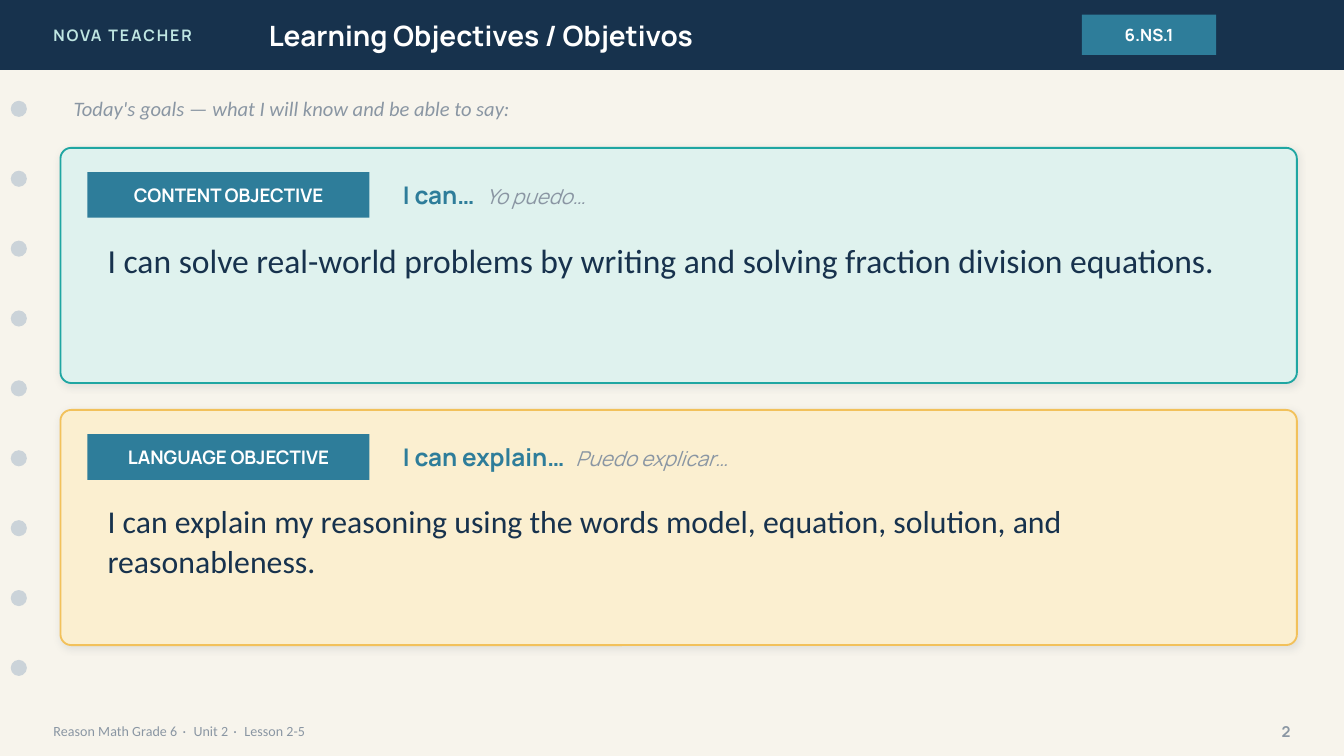
from lxml.etree import SubElement
from pptx import Presentation
from pptx.dml.color import RGBColor
from pptx.enum.shapes import MSO_SHAPE as Shape
from pptx.enum.text import MSO_ANCHOR as Anchor, MSO_AUTO_SIZE as AutoSize, PP_ALIGN as Align
from pptx.oxml.ns import qn
from pptx.util import Pt

NAVY, BLUE, GRAY, WHITE = "17324D", "2E7D9A", "8A96A3", "FFFFFF"
HEADING, BODY = "Manrope", "Calibri"


def color(hex_string):
    return RGBColor.from_string(hex_string)


def style(font, name, size, hex_string, bold=False, italic=False):
    font.name, font.size = name, Pt(size)
    font.bold, font.italic = bold, italic
    font.color.rgb = color(hex_string)


def add_run(paragraph, text, spacing=0):
    """Add a run; spacing is the extra room after each letter, in points."""
    run = paragraph.add_run()
    run.text = text
    if spacing:
        run.font._element.set("spc", str(round(spacing * 100)))
    return run


def place(shape, left, top, width, height):
    shape.left, shape.top = Pt(left), Pt(top)
    shape.width, shape.height = Pt(width), Pt(height)


def add_shape(slide, kind, box, fill, line=None):
    shape = slide.shapes.add_shape(kind, *map(Pt, box))
    shape.shadow.inherit = False
    shape.fill.solid()
    shape.fill.fore_color.rgb = color(fill)
    if line:
        shape.line.color.rgb = color(line)
        shape.line.width = Pt(1)
    else:
        shape.line.fill.background()
    return shape


def add_soft_shadow(shape):
    effects = shape._element.spPr.find(qn("a:effectLst"))
    shadow = SubElement(effects, qn("a:outerShdw"), blurRad=str(Pt(4)),
                        dist=str(Pt(1)), dir="5400000", algn="bl", rotWithShape="0")
    tint = SubElement(shadow, qn("a:srgbClr"), val="1C2E42")
    SubElement(tint, qn("a:alpha"), val="10000")


def add_text(slide, box):
    """Add a vertically centred text box and return its paragraph."""
    frame = slide.shapes.add_textbox(*map(Pt, box)).text_frame
    frame.word_wrap = True
    frame.vertical_anchor = Anchor.MIDDLE
    return frame.paragraphs[0]


def add_tag(slide, box, text, size):
    frame = add_shape(slide, Shape.RECTANGLE, box, BLUE).text_frame
    frame.vertical_anchor = Anchor.MIDDLE
    paragraph = frame.paragraphs[0]
    paragraph.text = text
    paragraph.alignment = Align.CENTER
    style(paragraph.font, HEADING, size, WHITE, bold=True)


def fill_placeholder(slide, shape, box, text, anchor):
    """Place a placeholder in front of what is drawn so far, without a bullet."""
    slide.shapes._spTree.append(shape._element)
    place(shape, *box)
    frame = shape.text_frame
    frame.auto_size = AutoSize.NONE
    frame.word_wrap = True
    frame.vertical_anchor = anchor
    paragraph = frame.paragraphs[0]
    paragraph.text = text
    paragraph.alignment = Align.LEFT
    paragraph.space_before = Pt(0)
    properties = paragraph._p.get_or_add_pPr()
    properties.set("marL", "0")
    properties.set("indent", "0")
    SubElement(properties, qn("a:buNone"))
    return paragraph


def add_header(slide):
    add_shape(slide, Shape.RECTANGLE, (0, 0, 720, 37.5), NAVY)
    paragraph = add_text(slide, (21.6, 0, 172.8, 37.5))
    add_run(paragraph, "NOVA TEACHER", spacing=1)
    style(paragraph.font, HEADING, 8.5, "BFE6E2", bold=True)
    title = fill_placeholder(slide, slide.shapes.title, (136.8, 0, 403.2, 37.5),
                             "Learning Objectives / Objetivos", Anchor.MIDDLE)
    style(title.font, HEADING, 15, WHITE, bold=True)
    add_tag(slide, (579.6, 7.9, 72, 21.6), "6.NS.1", 9)


def add_binder_holes(slide):
    for row in range(9):
        add_shape(slide, Shape.OVAL, (5.76, 54 + row * 37.44, 8.64, 8.64), "CBD3D9")


def add_footer(slide):
    paragraph = add_text(slide, (21.6, 381.6, 504, 20.2))
    for index, part in enumerate(("Reason Math Grade 6", "Unit 2", "Lesson 2-5")):
        if index:
            add_run(paragraph, " · ", spacing=1.1)
        add_run(paragraph, part)
    style(paragraph.font, BODY, 7.5, GRAY)
    number = add_text(slide, (662.4, 381.6, 36, 20.2))
    number.text = "2"
    number.alignment = Align.RIGHT
    style(number.font, HEADING, 8, GRAY, bold=True)


def add_objective(slide, body, top, fill, line, tag, starter, translation, goal, size):
    card = add_shape(slide, Shape.ROUNDED_RECTANGLE, (32.4, top, 662.4, 126), fill, line)
    card.adjustments[0] = 0.046
    add_soft_shadow(card)
    add_tag(slide, (46.8, top + 13, 151.2, 24.5), tag, 10)
    # Sentence starter in English, then in Spanish
    paragraph = add_text(slide, (208.8, top + 13, 475.2, 24.5))
    for text, spacing in ((starter, 0), (" ", 3.5)):
        style(add_run(paragraph, text, spacing).font, HEADING, 13, BLUE, bold=True)
    style(add_run(paragraph, translation).font, HEADING, 11, GRAY, italic=True)
    # Objective itself
    paragraph = fill_placeholder(slide, body, (50.4, top + 44.6, 626.4, 72), goal, Anchor.TOP)
    paragraph.line_spacing = 1.05
    style(paragraph.font, BODY, size, NAVY)


def main():
    presentation = Presentation()
    presentation.slide_width, presentation.slide_height = Pt(720), Pt(405)
    # "Two Content" layout: a title and two bodies
    slide = presentation.slides.add_slide(presentation.slide_layouts[3])
    slide.background.fill.solid()
    slide.background.fill.fore_color.rgb = color("F7F4EC")
    content_body, language_body = slide.placeholders[1], slide.placeholders[2]

    add_header(slide)
    add_binder_holes(slide)
    add_footer(slide)
    intro = add_text(slide, (32.4, 47.5, 662.4, 21.6))
    intro.text = "Today's goals — what I will know and be able to say:"
    style(intro.font, BODY, 11, GRAY, italic=True)

    add_objective(slide, content_body, 79.2, "DFF2EE", "1FA6A2", "CONTENT OBJECTIVE",
                  "I can…", "Yo puedo…",
                  "I can solve real-world problems by writing and solving "
                  "fraction division equations.", 18)
    add_objective(slide, language_body, 219.6, "FBEFD0", "F2C15B", "LANGUAGE OBJECTIVE",
                  "I can explain…", "Puedo explicar…",
                  "I can explain my reasoning using the words model, equation, "
                  "solution, and reasonableness.", 17)
    presentation.save("out.pptx")


if __name__ == "__main__":
    main()
